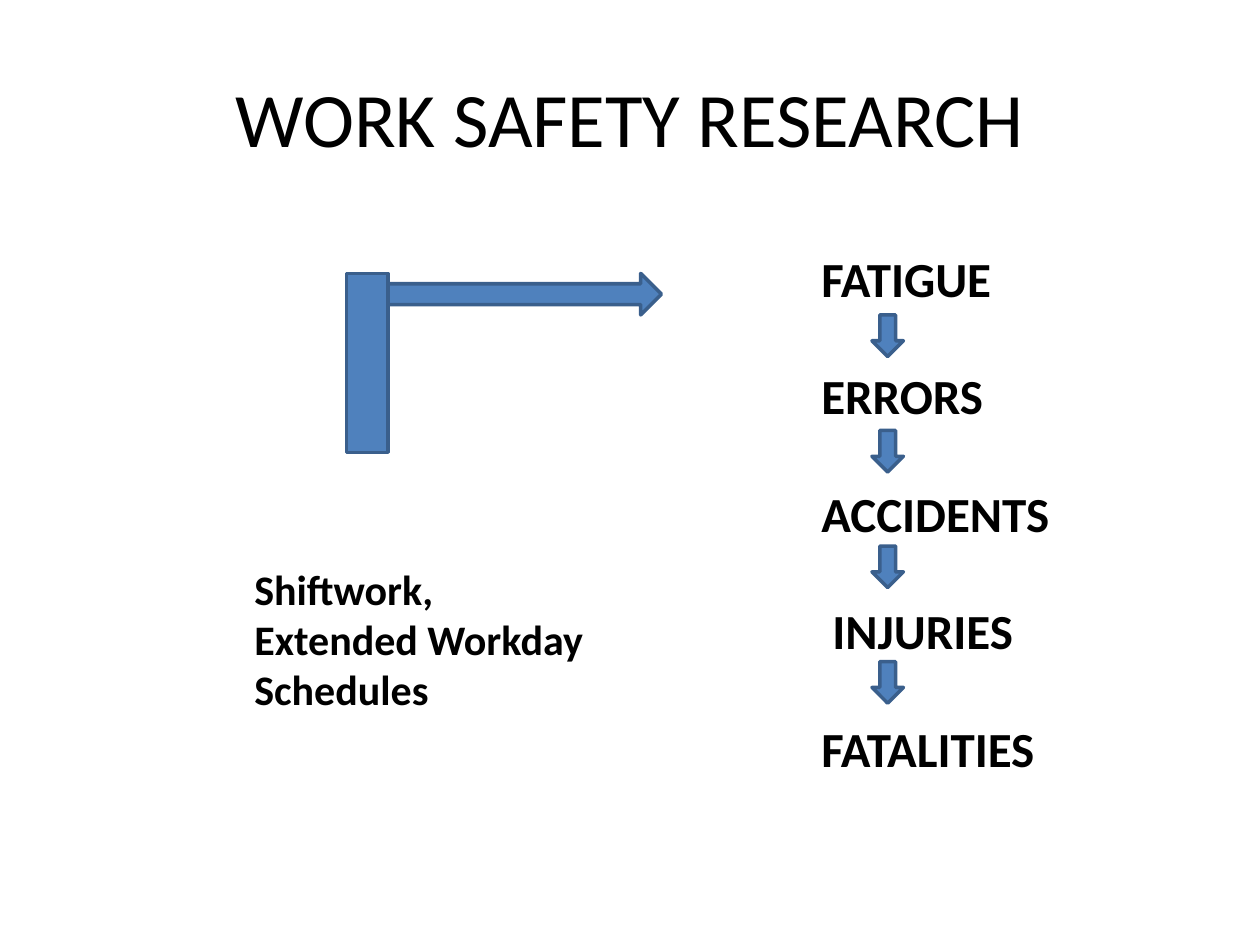
"""Build the work safety research slide: shiftwork leading to a chain of harm."""
from dataclasses import dataclass

from pptx import Presentation
from pptx.dml.color import RGBColor
from pptx.enum.shapes import MSO_SHAPE
from pptx.enum.text import MSO_ANCHOR, PP_ALIGN
from pptx.slide import Slide
from pptx.util import Inches, Pt

BLACK = RGBColor(0x00, 0x00, 0x00)
BLUE = RGBColor(0x4F, 0x81, 0xBD)
DARK_BLUE = RGBColor(0x3A, 0x5F, 0x8C)
RECTANGLE = MSO_SHAPE.RECTANGLE
RIGHT_ARROW = MSO_SHAPE.RIGHT_ARROW
DOWN_ARROW = MSO_SHAPE.DOWN_ARROW
TOP, MIDDLE = MSO_ANCHOR.TOP, MSO_ANCHOR.MIDDLE
LEFT, CENTER = PP_ALIGN.LEFT, PP_ALIGN.CENTER
FONT = "Calibri"

CAUSES = ["Shiftwork,", "Extended Workday", "Schedules"]
CONSEQUENCES = ["FATIGUE", "ERRORS", "ACCIDENTS", " INJURIES", "FATALITIES"]
FIRST_STEP_TOP = 2.5
STEP_PITCH = 0.917


@dataclass(frozen=True)
class Box:
    left: float
    top: float
    width: float
    height: float

    def emu(self) -> tuple[int, int, int, int]:
        return (Inches(self.left), Inches(self.top),
                Inches(self.width), Inches(self.height))


@dataclass(frozen=True)
class TextBlock:
    box: Box
    lines: list[str]
    size: float
    bold: bool = True
    wrap: bool = True
    gap: float = 0
    align: PP_ALIGN = LEFT
    anchor: MSO_ANCHOR = TOP


def draw_text(slide: Slide, block: TextBlock) -> None:
    frame = slide.shapes.add_textbox(*block.box.emu()).text_frame
    frame.word_wrap = block.wrap
    frame.vertical_anchor = block.anchor
    frame.text = "\n".join(block.lines)
    for index, paragraph in enumerate(frame.paragraphs):
        paragraph.alignment = block.align
        paragraph.space_before = Pt(block.gap if index else 0)
        for run in paragraph.runs:
            run.font.name = FONT
            run.font.size = Pt(block.size)
            run.font.bold = block.bold
            run.font.color.rgb = BLACK


def draw_shape(slide: Slide, kind: MSO_SHAPE, box: Box) -> None:
    shape = slide.shapes.add_shape(kind, *box.emu())
    shape.shadow.inherit = False
    shape.fill.solid()
    shape.fill.fore_color.rgb = BLUE
    shape.line.color.rgb = DARK_BLUE
    shape.line.width = Pt(2)


def main() -> None:
    presentation = Presentation()
    presentation.slide_width = Inches(10)
    presentation.slide_height = Inches(7.5)
    slide = presentation.slides.add_slide(presentation.slide_layouts[6])

    draw_text(slide, TextBlock(Box(0.5, 0.3, 9, 1.25), ["WORK SAFETY RESEARCH"], 44,
                               bold=False, align=CENTER, anchor=MIDDLE))
    draw_text(slide, TextBlock(Box(1.92, 4.42, 2.91, 1.31), CAUSES, 24, wrap=False))
    draw_shape(slide, RECTANGLE, Box(2.75, 2.17, 0.33, 1.42))
    draw_shape(slide, RIGHT_ARROW, Box(3.08, 2.17, 2.17, 0.33))
    draw_text(slide, TextBlock(Box(6.42, 1.92, 2.42, 4.34), CONSEQUENCES, 28, gap=33.6))
    for step in range(len(CONSEQUENCES) - 1):
        step_top = FIRST_STEP_TOP + step * STEP_PITCH
        draw_shape(slide, DOWN_ARROW, Box(6.92, step_top, 0.25, 0.33))

    presentation.save("out.pptx")


if __name__ == "__main__":
    main()
